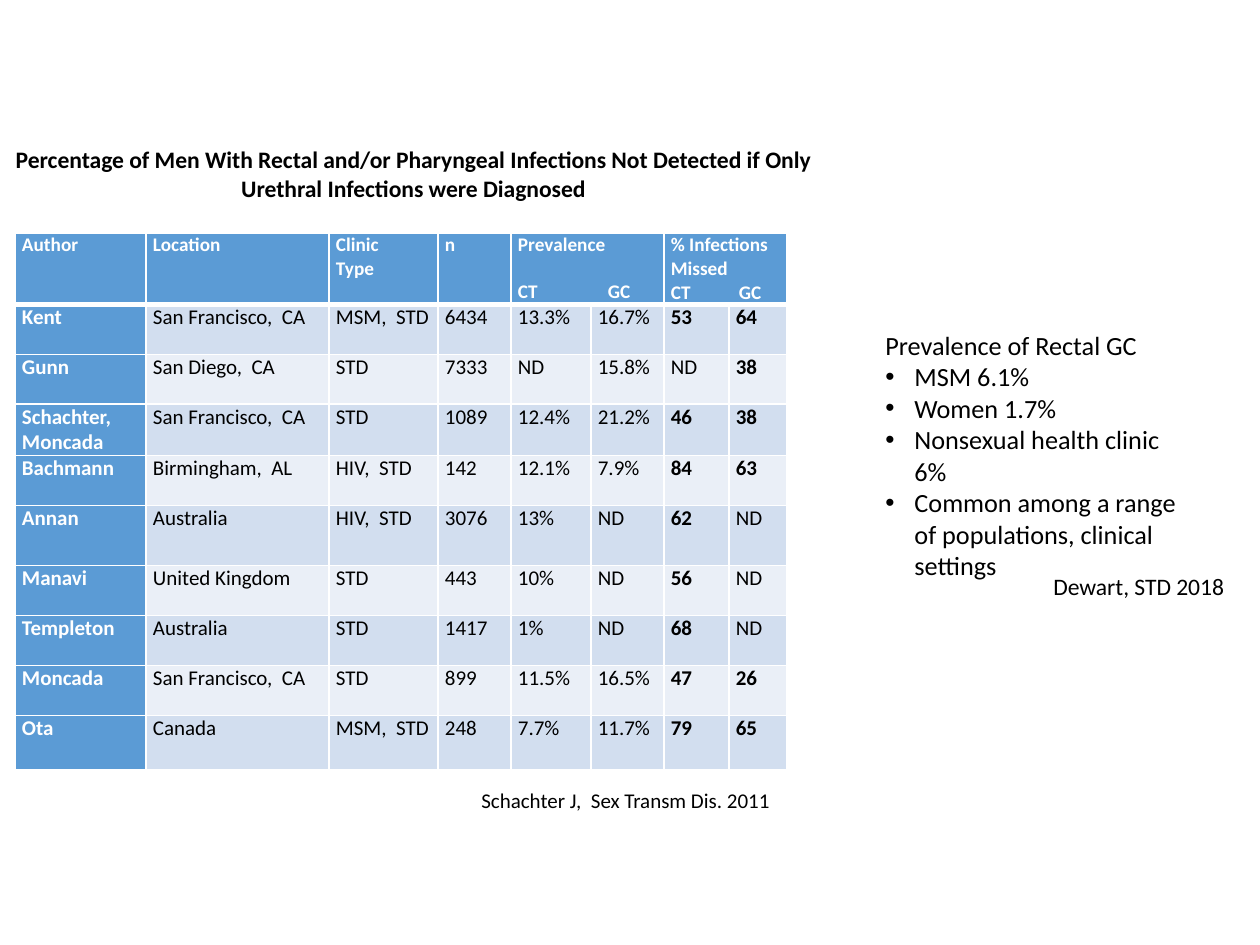
from lxml import etree
from pptx import Presentation
from pptx.dml.color import RGBColor
from pptx.enum import text
from pptx.oxml import ns
from pptx.util import Pt

TITLE = ("Percentage of Men With Rectal and/or Pharyngeal Infections Not Detected "
         "if Only Urethral Infections were Diagnosed")
# Each heading is a list of lines, placed at its first column
HEADS = {
    0: ["Author"], 1: ["Location"], 2: ["Clinic", "Type"], 3: ["n"],
    4: ["Prevalence", "CT\tGC"], 6: ["% Infections", "Missed", "CT\tGC"],
}
STUDIES = [
    ("Kent", "San Francisco,  CA", "MSM,  STD", "6434", "13.3%", "16.7%", "53", "64"),
    ("Gunn", "San Diego,  CA", "STD", "7333", "ND", "15.8%", "ND", "38"),
    ("Schachter, Moncada", "San Francisco,  CA", "STD", "1089", "12.4%", "21.2%", "46", "38"),
    ("Bachmann", "Birmingham,  AL", "HIV,  STD", "142", "12.1%", "7.9%", "84", "63"),
    ("Annan", "Australia", "HIV,  STD", "3076", "13%", "ND", "62", "ND"),
    ("Manavi", "United Kingdom", "STD", "443", "10%", "ND", "56", "ND"),
    ("Templeton", "Australia", "STD", "1417", "1%", "ND", "68", "ND"),
    ("Moncada", "San Francisco,  CA", "STD", "899", "11.5%", "16.5%", "47", "26"),
    ("Ota", "Canada", "MSM,  STD", "248", "7.7%", "11.7%", "79", "65"),
]
FINDINGS = ["MSM 6.1%", "Women 1.7%", "Nonsexual health clinic 6%",
            "Common among a range of populations, clinical settings"]
# Text boxes: place in px, size in pt, first line, bullets
NOTES = [
    ((469, 781, 444, 38), 12, "Schachter J,  Sex Transm Dis. 2011", []),
    ((873, 323, 335, 267), 15, "Prevalence of Rectal GC", FINDINGS),
    ((1041, 566, 256, 42), 13.5, "Dewart, STD 2018", []),
]
COLS = [131, 183, 109, 73, 80, 73, 65, 58]
ROWS = [70, 50, 50, 50, 50, 60, 50, 50, 50, 54]
TABS = {4: 90, 6: 68}

BLUE = RGBColor(0x5B, 0x9B, 0xD5)
BANDS = [RGBColor(0xD2, 0xDE, 0xEF), RGBColor(0xEA, 0xEF, 0xF7)]
WHITE = RGBColor(255, 255, 255)
BLACK = RGBColor(0, 0, 0)


def px(n):
    return round(n * 914400 / 126)


def add(parent, tag, **attrs):
    return etree.SubElement(parent, ns.qn(tag), attrs)


def write(par, words, size, color=BLACK, bold=False):
    run = par.add_run()
    run.text = words
    font = {"name": "Calibri", "size": Pt(size), "bold": bold}
    for key, value in font.items():
        setattr(run.font, key, value)
    run.font.color.rgb = color


def lines(frame, count):
    """Return count paragraphs of a new text frame."""
    return [frame.paragraphs[0]] + [frame.add_paragraph() for _ in range(count - 1)]


def place(shape, box):
    for key, value in zip(("left", "top", "width", "height"), box):
        setattr(shape, key, px(value))


def style(cell, row, fill):
    """Set margins, white borders and fill; the rule under the header is thick."""
    margins = {"margin_left": px(7), "margin_right": px(7),
               "margin_top": 0, "margin_bottom": 0}
    for key, value in margins.items():
        setattr(cell, key, value)
    props = cell._tc.get_or_add_tcPr()
    for side in "LRTB":
        thick = (row, side) in ((0, "B"), (1, "T"))
        line = add(props, f"a:ln{side}", w=str(Pt(3 if thick else 1)))
        add(add(line, "a:solidFill"), "a:srgbClr", val=str(WHITE))
    cell.fill.solid()
    cell.fill.fore_color.rgb = fill


def add_table(slide):
    frame = slide.shapes.add_table(len(ROWS), len(COLS), px(15), px(233),
                                   px(sum(COLS)), px(sum(ROWS)))
    table = frame.table
    for col, width in zip(table.columns, COLS):
        col.width = px(width)
    for row, height in zip(table.rows, ROWS):
        row.height = px(height)
    for c in range(len(COLS)):
        style(table.cell(0, c), 0, BLUE)
    for c in TABS:
        table.cell(0, c).merge(table.cell(0, c + 1))
    for c, head in HEADS.items():
        pars = lines(table.cell(0, c).text_frame, len(head))
        for par, words in zip(pars, head):
            write(par, words, 11, WHITE, True)
        if c in TABS:
            tabs = add(pars[-1]._p.get_or_add_pPr(), "a:tabLst")
            add(tabs, "a:tab", pos=str(px(TABS[c])), algn="l")
            if len(head) == 2:
                pars[-1].space_before = Pt(13.4)
    for r, study in enumerate(STUDIES, 1):
        for c, words in enumerate(study):
            cell = table.cell(r, c)
            style(cell, r, BANDS[(r - 1) % 2] if c else BLUE)
            bold = c == 0 or (c >= 6 and words != "ND")
            write(cell.text_frame.paragraphs[0], words, 12, BLACK if c else WHITE, bold)


def add_note(slide, box, size, first, bullets):
    frame = slide.shapes.add_textbox(*map(px, box)).text_frame
    frame.word_wrap = True
    pars = lines(frame, 1 + len(bullets))
    write(pars[0], first, size)
    for par, words in zip(pars[1:], bullets):
        props = par._p.get_or_add_pPr()
        props.set("marL", str(px(29)))
        props.set("indent", str(px(-29)))
        add(props, "a:buFont", typeface="Arial")
        add(props, "a:buChar", char="•")
        write(par, words, size)


def main():
    deck = Presentation()
    deck.slide_width, deck.slide_height = px(1260), px(945)
    slide = deck.slides.add_slide(deck.slide_layouts[5])
    title = slide.shapes.title
    place(title, (0, 139, 827, 71))
    frame = title.text_frame
    frame.auto_size = text.MSO_AUTO_SIZE.NONE
    frame.vertical_anchor = text.MSO_ANCHOR.TOP
    frame.paragraphs[0].alignment = text.PP_ALIGN.CENTER
    write(frame.paragraphs[0], TITLE, 13.5, bold=True)
    add_table(slide)
    for note in NOTES:
        add_note(slide, *note)
    deck.save("out.pptx")


if __name__ == "__main__":
    main()
